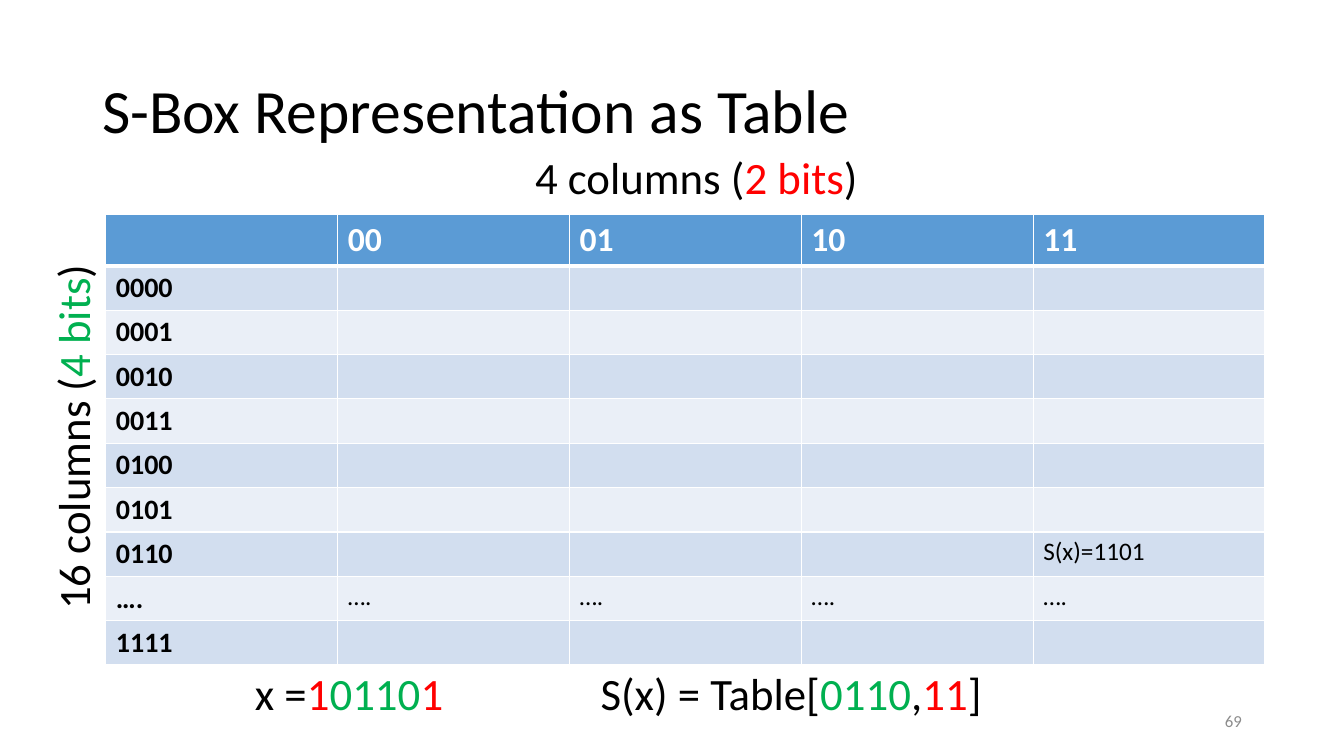
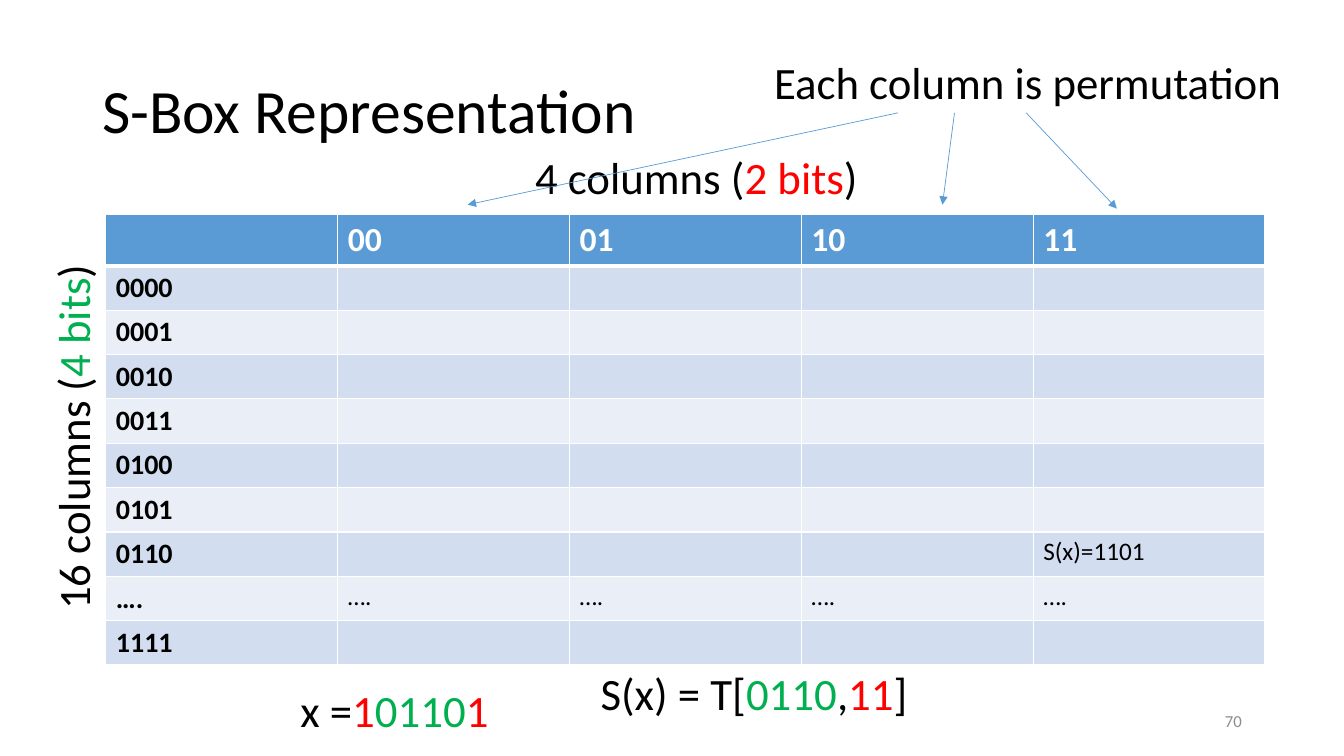
import dataclasses

import lxml.etree
import pptx
import pptx.dml.color
import pptx.enum.shapes
import pptx.enum.text
import pptx.oxml.ns
import pptx.util

Pt = pptx.util.Pt
ALIGN = pptx.enum.text.PP_ALIGN
qn = pptx.oxml.ns.qn


# Colours and type sizes
@dataclasses.dataclass(frozen=True)
class Theme:
    font: str = "Calibri"
    ink: str = "000000"
    white: str = "FFFFFF"
    accent: str = "5B9BD5"
    bands: tuple = ("D2DEEF", "EAEFF7")
    column_bits: str = "FF0000"
    row_bits: str = "00B050"
    muted: str = "8C8C8C"
    title: int = 44
    label: int = 32
    head: int = 24
    row_head: int = 20
    entry: int = 18
    footer: int = 12


THEME = Theme()
INK, RED, GREEN = THEME.ink, THEME.column_bits, THEME.row_bits


class Deck:
    def __init__(self, theme):
        self.theme = theme
        self.deck = pptx.Presentation()
        self.deck.slide_width, self.deck.slide_height = Pt(960), Pt(540)
        self.slide = None

    def color(self, value):
        return pptx.dml.color.RGBColor.from_string(value)

    def add_runs(self, paragraph, runs, size, bold=False):
        for words, color in runs:
            run = paragraph.add_run()
            run.text = words
            run.font.name = self.theme.font
            run.font.size = Pt(size)
            run.font.bold = bold
            run.font.color.rgb = self.color(color)

    def text(self, box, runs, size, wrap=True, middle=False, align=ALIGN.LEFT):
        shape = self.slide.shapes.add_textbox(*map(Pt, box))
        frame = shape.text_frame
        frame.word_wrap = wrap
        if middle:
            frame.vertical_anchor = pptx.enum.text.MSO_ANCHOR.MIDDLE
        paragraph = frame.paragraphs[0]
        paragraph.alignment = align
        self.add_runs(paragraph, runs, size)
        return shape

    def label(self, left, top, width, runs, rotation=0):
        shape = self.text((left, top, width, 46), runs, self.theme.label, wrap=False)
        shape.text_frame.auto_size = pptx.enum.text.MSO_AUTO_SIZE.SHAPE_TO_FIT_TEXT
        shape.rotation = rotation

    def page(self, title, number):
        self.slide = self.deck.slides.add_slide(self.deck.slide_layouts[6])
        heading = self.text((66, 28.8, 828, 104.4), [(title, INK)],
                            self.theme.title, middle=True)
        heading.text_frame.paragraphs[0].line_spacing = 0.9
        self.text((678.2, 500.4, 216, 28.8), [(str(number), self.theme.muted)],
                  self.theme.footer, middle=True, align=ALIGN.RIGHT)

    def border(self, cell, bottom):
        props = cell._tc.get_or_add_tcPr()
        for side, width in (("L", 1), ("R", 1), ("T", 1), ("B", bottom)):
            line = lxml.etree.SubElement(props, qn("a:ln" + side), w=str(Pt(width)))
            fill = lxml.etree.SubElement(line, qn("a:solidFill"))
            lxml.etree.SubElement(fill, qn("a:srgbClr"), val=self.theme.white)

    def table(self, left, top, width, rows, head_height, row_height):
        theme = self.theme
        height = head_height + row_height * (len(rows) - 1)
        grid = self.slide.shapes.add_table(
            len(rows), len(rows[0]), *map(Pt, (left, top, width, height))).table
        grid.horz_banding = False
        for r, entries in enumerate(rows):
            grid.rows[r].height = Pt(row_height if r else head_height)
            for c, words in enumerate(entries):
                cell = grid.cell(r, c)
                self.border(cell, 1 if r else 3)
                cell.fill.solid()
                fill = theme.bands[(r - 1) % 2] if r else theme.accent
                cell.fill.fore_color.rgb = self.color(fill)
                if words:
                    size = theme.entry if r and c else theme.row_head if r else theme.head
                    self.add_runs(cell.text_frame.paragraphs[0],
                                  [(words, INK if r else theme.white)],
                                  size, bold=r == 0 or c == 0)

    def arrow(self, start, end):
        line = self.slide.shapes.add_connector(
            pptx.enum.shapes.MSO_CONNECTOR.STRAIGHT, *map(Pt, start + end))
        line.line.color.rgb = self.color(self.theme.accent)
        line.line.width = Pt(0.5)
        outline = line._element.spPr.find(qn("a:ln"))
        lxml.etree.SubElement(outline, qn("a:tailEnd"), type="triangle")
        lxml.etree.SubElement(line._element.spPr, qn("a:effectLst"))


# S-box contents: row index, then one entry per column
DOTS = "\u2026."
SBOX = [["", "00", "01", "10", "11"]]
SBOX += [[format(row, "04b"), "", "", "", ""] for row in range(7)]
SBOX += [[DOTS] * 5, ["1111", "", "", "", ""]]
SBOX[7][4] = "S(x)=1101"


def sbox_page(deck, title, number, input_at, table_name, lookup_width):
    deck.page(title, number)
    deck.table(75.6, 153.4, 828, SBOX, 36.4, 31.7)
    deck.label(*input_at, 157.7,
               [("x =", INK), ("1", RED), ("0110", GREEN), ("1 ", RED)])
    deck.label(421.9, 472.3, lookup_width,
               [(f"S(x) = {table_name}[", INK), ("0110", GREEN), (",", INK),
                ("11", RED), ("]", INK)])
    deck.label(375.1, 103.7, 247.7,
               [("4 columns (", INK), ("2 bits", RED), (")", INK)])
    deck.label(-79.9, 288, 263.5,
               [("16 columns (", INK), ("4 bits", GREEN), (")", INK)], rotation=270)


deck = Deck(THEME)

# Table representation
sbox_page(deck, "S-Box Representation as Table", 69, (175, 472.3), "Table", 289.4)

# Columns as permutations
sbox_page(deck, "S-Box Representation", 70, (207.4, 483.8), "T", 236.2)
for start_x, tip in ((733, (797.8, 149)), (681.8, (673.2, 146.2)), (641.5, (334.1, 146.2))):
    deck.arrow((start_x, 80.6), tip)
deck.label(545.8, 35.3, 380.9, [("Each column is permutation", INK)])

deck.deck.save("out.pptx")
